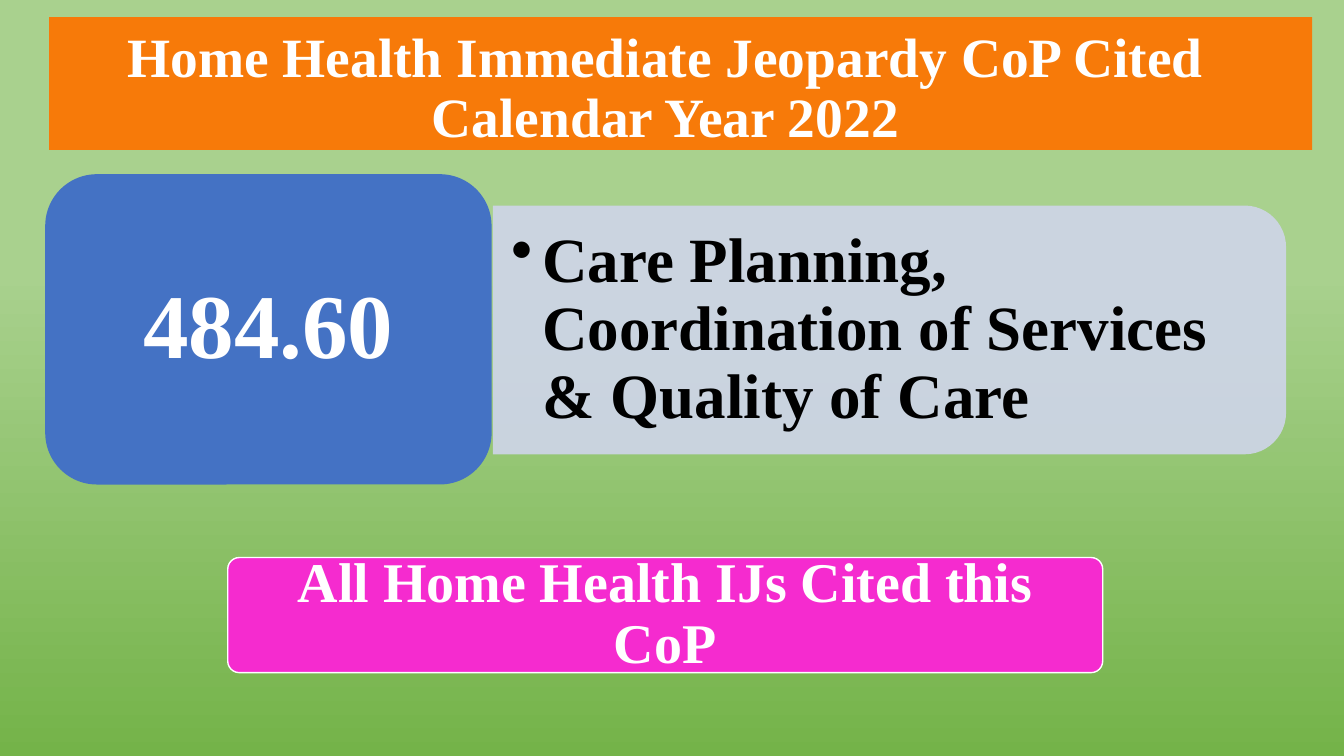
from lxml import etree
from pptx import Presentation
from pptx.dml.color import RGBColor
from pptx.enum.shapes import MSO_SHAPE
from pptx.enum.text import MSO_ANCHOR, PP_ALIGN
from pptx.oxml.ns import qn
from pptx.util import Cm, Pt

RECT = MSO_SHAPE.RECTANGLE
ROUND = MSO_SHAPE.ROUNDED_RECTANGLE
TAB = MSO_SHAPE.ROUND_2_SAME_RECTANGLE
MIDDLE = MSO_ANCHOR.MIDDLE
LEFT, CENTER = PP_ALIGN.LEFT, PP_ALIGN.CENTER

WHITE = RGBColor(0xFF, 0xFF, 0xFF)
BLACK = RGBColor(0x00, 0x00, 0x00)
ORANGE = RGBColor(0xF7, 0x7A, 0x09)
PINK = RGBColor(0xF5, 0x2B, 0xCF)
BLUE = RGBColor(0x44, 0x72, 0xC4)
PALE = RGBColor(0xCF, 0xD5, 0xEA)
GREEN = RGBColor(0x74, 0xB3, 0x49)
LIGHT = RGBColor(0xA9, 0xD1, 0x8E)


class Deck:
    font = {"name": "Times New Roman", "bold": True}

    def __init__(self, prs):
        self.slide = prs.slides.add_slide(prs.slide_layouts[6])

    def backdrop(self, low, high, reach):
        """Shade from low at the bottom to high at the given share of the height."""
        fill = self.slide.background.fill
        fill.gradient()
        fill.gradient_angle = 90
        for stop, color, pos in zip(fill.gradient_stops, (low, high), (0, reach)):
            stop.color.rgb = color
            stop.position = pos

    def block(self, kind, box, color, line=None, adj=None):
        shape = self.slide.shapes.add_shape(kind, *map(Cm, box))
        shape.shadow.inherit = False
        shape.fill.solid()
        shape.fill.fore_color.rgb = color
        if line is None:
            shape.line.fill.background()
        else:
            shape.line.color.rgb = line
            shape.line.width = Pt(1)
        if adj is not None:
            shape.adjustments[0] = adj
        return shape

    def label(self, box):
        return self.slide.shapes.add_textbox(*map(Cm, box))

    def put_text(self, shape, text, size, color=WHITE, align=CENTER, pad=(0.25, 0.13)):
        frame = shape.text_frame
        side, edge = map(Cm, pad)
        form = {"word_wrap": True, "vertical_anchor": MIDDLE,
                "margin_left": side, "margin_right": side,
                "margin_top": edge, "margin_bottom": edge}
        for key, value in form.items():
            setattr(frame, key, value)
        para = frame.paragraphs[0]
        para.alignment = align
        para.line_spacing = 0.9
        run = para.add_run()
        run.text = text
        for key, value in {**self.font, "size": Pt(size)}.items():
            setattr(run.font, key, value)
        run.font.color.rgb = color
        return para

    def bullet(self, para, indent):
        props = para._p.get_or_add_pPr()
        props.set("marL", str(Cm(indent)))
        props.set("indent", str(-Cm(indent)))
        etree.SubElement(props, qn("a:buChar")).set("char", "•")

    def fade(self, shape, share):
        """Set the opacity of a solid fill, in percent."""
        color = shape._element.spPr.find(qn("a:solidFill"))[0]
        etree.SubElement(color, qn("a:alpha")).set("val", str(share * 1000))


def main():
    prs = Presentation()
    prs.slide_width, prs.slide_height = Cm(33.87), Cm(19.05)
    deck = Deck(prs)
    deck.backdrop(GREEN, LIGHT, 0.64)

    deck.block(RECT, (1.24, 0.43, 31.83, 3.35), ORANGE)
    title = deck.label((1.35, 0.58, 30.84, 3.35))
    deck.put_text(title, "Home Health Immediate Jeopardy CoP Cited Calendar Year 2022", 39.6)

    note = deck.block(ROUND, (5.74, 14.05, 22.05, 2.9), PINK, WHITE, 0.1)
    deck.put_text(note, "All Home Health IJs Cited this CoP", 40, pad=(0.43, 0.43))

    panel = deck.block(TAB, (19.28, -1.68, 6.27, 19.99), PALE)
    panel.rotation = 90
    deck.fade(panel, 90)
    topic = deck.label((12.4, 5.49, 19.69, 5.64))
    para = deck.put_text(topic, "Care Planning, Coordination of Services & Quality of Care",
                         45, BLACK, LEFT, (0.48, 0.24))
    deck.bullet(para, 0.79)

    code = deck.block(ROUND, (1.14, 4.39, 11.25, 7.82), BLUE)
    deck.put_text(code, "484.60", 65, pad=(0.69, 0.34))
    prs.save("out.pptx")


if __name__ == "__main__":
    main()
